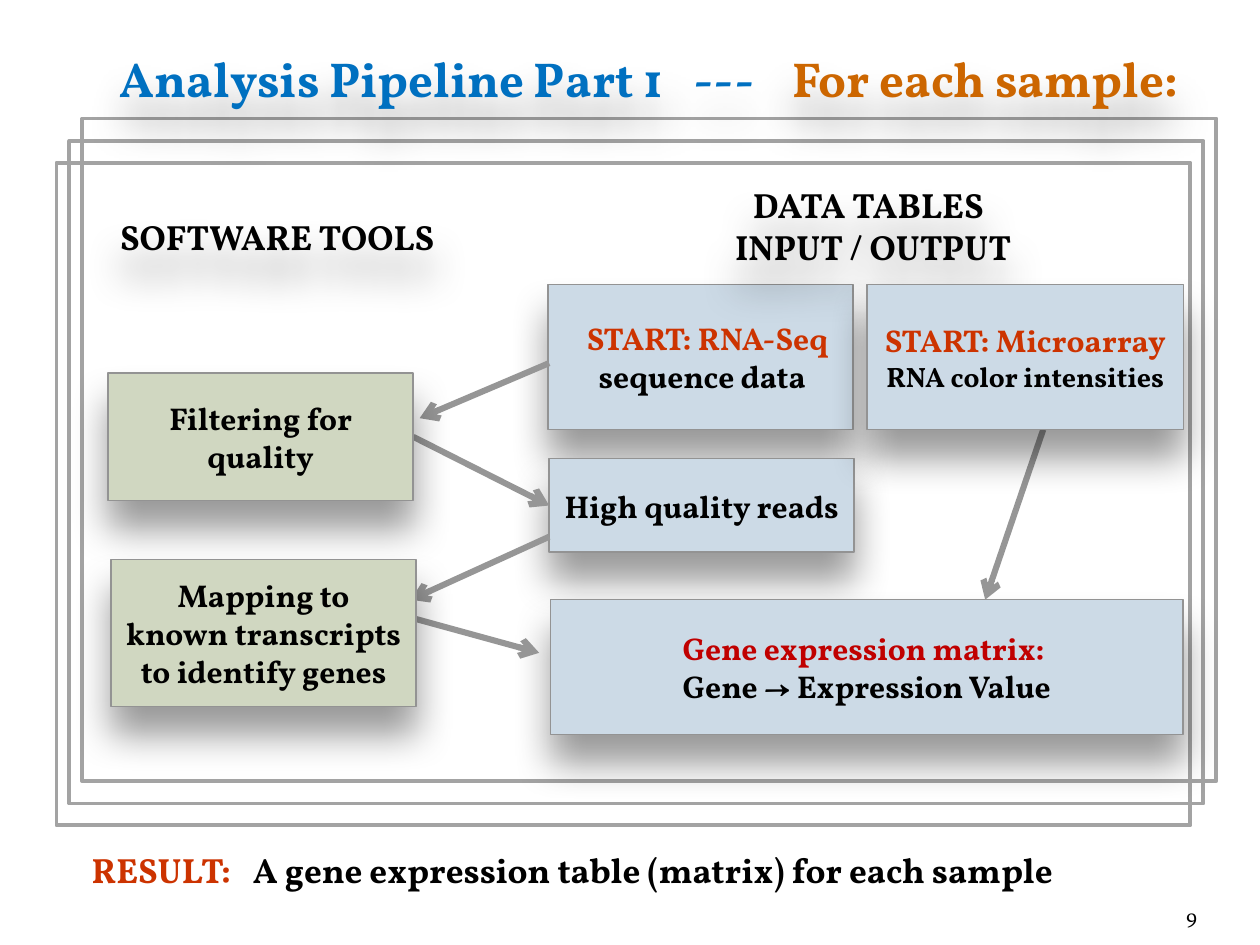
"""Build the slide of the analysis pipeline for each sample."""
from dataclasses import dataclass

from lxml import etree
from pptx import Presentation
from pptx.dml.color import RGBColor
from pptx.enum.shapes import MSO_CONNECTOR, MSO_SHAPE
from pptx.enum.text import MSO_ANCHOR, PP_ALIGN
from pptx.oxml.ns import qn
from pptx.util import Cm, Pt

RECT, LINE = MSO_SHAPE.RECTANGLE, MSO_CONNECTOR.STRAIGHT
MID, TOP, BASE = MSO_ANCHOR.MIDDLE, MSO_ANCHOR.TOP, MSO_ANCHOR.BOTTOM
LEFT, MIDST, RIGHT = PP_ALIGN.LEFT, PP_ALIGN.CENTER, PP_ALIGN.RIGHT
FONT = "Vollkorn"
BLACK, RED, DARK = "000000", "CC3300", "C00000"
BLUE, GREEN, GREY = "CCDAE6", "D0D7C1", "939393"


@dataclass
class Para:
    words: tuple
    size: int = 18
    align: PP_ALIGN = MIDST
    indent: float = 0
    tabs: tuple = ()
    bold: bool = True


@dataclass
class Box:
    name: str
    area: tuple
    paras: tuple
    fill: str


@dataclass
class Label:
    area: tuple
    paras: tuple
    anchor: MSO_ANCHOR = MID
    shade: bool = True
    inset: float = 0.25
    end: float = 0.25


def black(text: str, **look) -> Para:
    return Para(((text, BLACK),), **look)


FRAMES = [(1.66, 2.39), (1.4, 2.84), (1.14, 3.28)]
STARTS = [
    Box("seq", (11.05, 5.74, 6.15, 2.92),
        (Para((("START: RNA-Seq", RED),), align=LEFT, indent=0.53),
         black("sequence data", align=LEFT, indent=0.77)), BLUE),
    Box("reads", (11.07, 9.25, 6.15, 1.88), (black("High quality reads"),), BLUE),
    Box("matrix", (11.1, 12.09, 12.75, 2.72),
        (Para((("Gene expression matrix: ", DARK),)),
         black("Gene → Expression Value")), BLUE),
]
TOOLS = [
    Box("filter", (2.18, 7.52, 6.15, 2.57), (black("Filtering for quality"),), GREEN),
    Box("map", (2.24, 11.28, 6.15, 2.97),
        (black("Mapping to known transcripts to identify genes"),), GREEN),
    Box("array", (17.48, 5.74, 6.38, 2.92),
        (Para((("START: Microarray", RED),)),
         black("RNA color intensities", size=16)), BLUE),
]
LABELS = [
    Label((14.33, 3.61, 6.55, 1.88),
          (black("DATA TABLES", size=20, align=LEFT, indent=0.6),
           black("INPUT / OUTPUT", size=20, align=LEFT, indent=0.24))),
    Label((2.06, 4.04, 7.06, 1.45), (black("SOFTWARE TOOLS", size=20),)),
    Label((1.4, 0.89, 23.37, 1.37),
          (Para((("Analysis Pipeline Part 1\t---\t", "0070C0"),
                 ("For each sample:", "CC6600")), 28, LEFT, tabs=(11.56, 13.55)),),
          inset=1.02),
    Label((1.6, 16.99, 21.54, 1.12),
          (Para((("RESULT:\t", RED),
                 ("A gene expression table (matrix) for each sample", BLACK)),
                20, LEFT, tabs=(3.25,)),), TOP, False),
    Label((22.02, 17.83, 2.11, 1.02),
          (black("9", size=12, align=RIGHT, bold=False),), BASE, False, 0, 0),
]
ARROWS = [
    ((11.07, 7.32), (8.46, 8.43)),
    ((8.33, 8.81), (11.07, 10.19)),
    ((11.07, 10.82), (8.28, 12.09)),
    ((8.1, 12.4), (10.87, 13.16)),
    ((21.03, 8.66), (19.86, 12.09)),
]


def tint(color, code: str) -> None:
    color.rgb = RGBColor.from_string(code)


def shade(shape) -> None:
    shape.shadow.inherit = False
    glow = etree.SubElement(
        shape.element.spPr.find(qn("a:effectLst")), qn("a:outerShdw"),
        blurRad=str(Pt(22)), dist=str(Pt(16)), dir="5400000",
        algn="ctr", rotWithShape="0")
    color = etree.SubElement(glow, qn("a:srgbClr"), val=BLACK)
    etree.SubElement(color, qn("a:alpha"), val="40000")


def write(frame, paras: tuple, anchor: MSO_ANCHOR) -> None:
    frame.word_wrap = True
    frame.vertical_anchor = anchor
    for i, item in enumerate(paras):
        para = frame.add_paragraph() if i else frame.paragraphs[0]
        para.alignment = item.align
        props = para._p.get_or_add_pPr()
        props.set("marL", str(Cm(item.indent)))
        if item.tabs:
            stops = etree.SubElement(props, qn("a:tabLst"))
            for stop in item.tabs:
                etree.SubElement(stops, qn("a:tab"), pos=str(Cm(stop)), algn="l")
        font = para.font
        font.name, font.size, font.bold = FONT, Pt(item.size), item.bold
        for text, code in item.words:
            run = para.add_run()
            run.text = text
            tint((font if len(item.words) == 1 else run.font).color, code)


def add_frame(shapes, left: float, top: float) -> None:
    shape = shapes.add_shape(RECT, Cm(left), Cm(top), Cm(22.86), Cm(13.36))
    shape.shadow.inherit = False
    shape.fill.background()
    tint(shape.line.color, "A3A3A3")
    shape.line.width = Pt(2.25)


def add_box(shapes, box: Box):
    shape = shapes.add_shape(RECT, *map(Cm, box.area))
    shape.fill.solid()
    tint(shape.fill.fore_color, box.fill)
    tint(shape.line.color, GREY)
    shape.line.width = Pt(0.75)
    shade(shape)
    write(shape.text_frame, box.paras, MID)
    return shape


def add_label(shapes, label: Label) -> None:
    shape = shapes.add_textbox(*map(Cm, label.area))
    frame = shape.text_frame
    frame.margin_left, frame.margin_right = Cm(label.inset), Cm(label.end)
    write(frame, label.paras, label.anchor)
    if label.shade:
        shade(shape)


def add_arrow(shapes, start: tuple, end: tuple):
    arrow = shapes.add_connector(LINE, *map(Cm, start + end))
    tint(arrow.line.color, "969696")
    arrow.line.width = Pt(3.5)
    props = arrow.element.spPr
    etree.SubElement(props.find(qn("a:ln")), qn("a:tailEnd"), type="arrow")
    etree.SubElement(props, qn("a:effectLst"))
    return arrow


def main() -> None:
    deck = Presentation()
    deck.slide_width, deck.slide_height = Cm(25.4), Cm(19.05)
    shapes = deck.slides.add_slide(deck.slide_layouts[6]).shapes
    for spot in FRAMES:
        add_frame(shapes, *spot)
    nodes = {box.name: add_box(shapes, box) for box in STARTS}
    arrows = [add_arrow(shapes, *ends) for ends in ARROWS]
    for label in LABELS:
        add_label(shapes, label)
    nodes.update((box.name, add_box(shapes, box)) for box in TOOLS)
    arrows[1].begin_connect(nodes["filter"], 3)
    arrows[1].end_connect(nodes["reads"], 1)
    deck.save("out.pptx")


if __name__ == "__main__":
    main()
